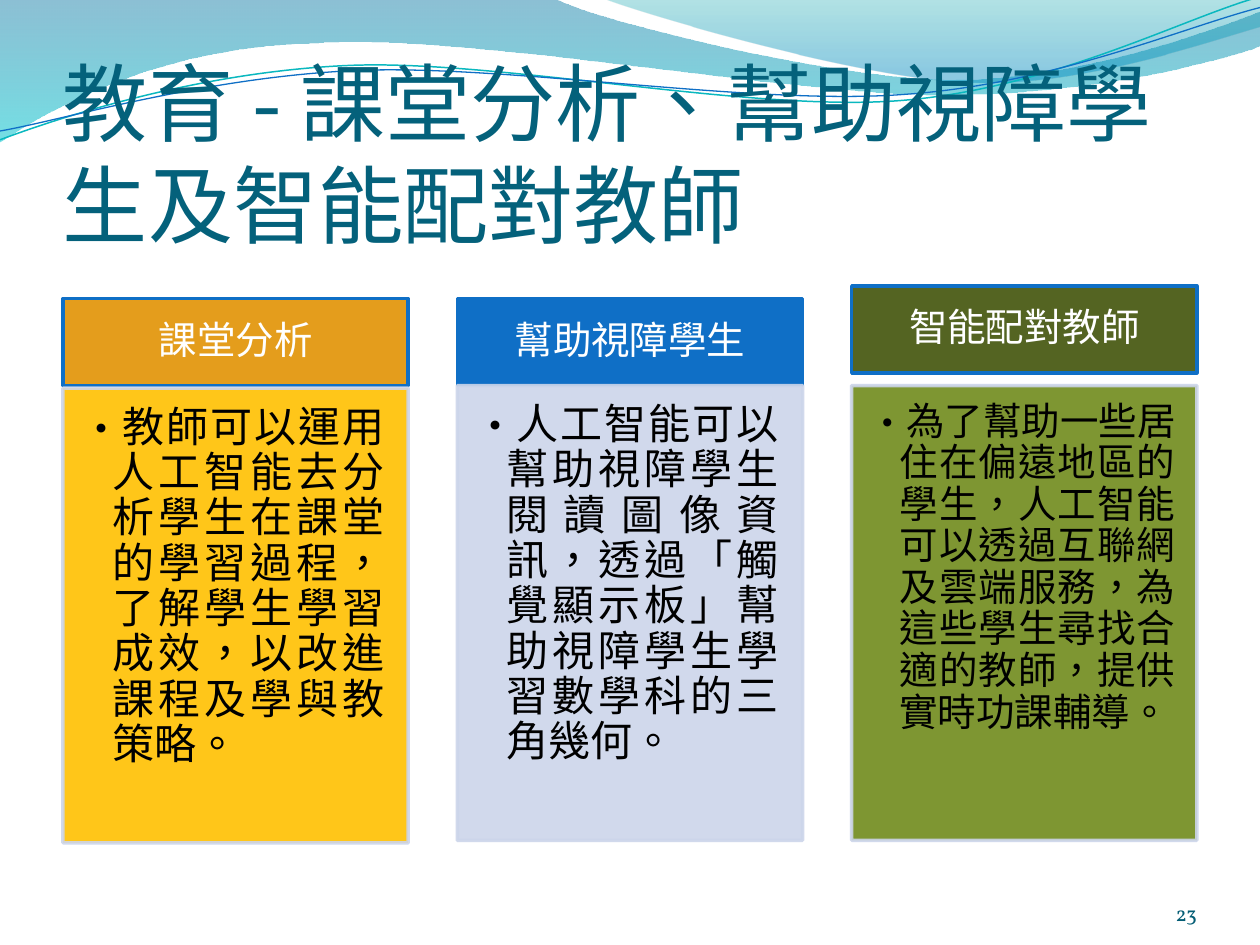
from lxml.etree import SubElement
from pptx import Presentation
from pptx.dml.color import RGBColor
from pptx.enum.lang import MSO_LANGUAGE_ID
from pptx.enum.shapes import MSO_SHAPE
from pptx.enum.text import MSO_ANCHOR, PP_ALIGN
from pptx.oxml.ns import qn
from pptx.util import Inches, Pt

CJK = "Noto Sans CJK SC"
WHITE = RGBColor(0xFF, 0xFF, 0xFF)
BLACK = RGBColor(0, 0, 0)
TEAL = RGBColor(0x04, 0x61, 0x7B)
NUMBER = RGBColor(0x04, 0x5D, 0x75)
BLUE = RGBColor(0x0F, 0x6F, 0xC6)
AQUA = RGBColor(0x0A, 0xB8, 0xBF)
ORANGE = RGBColor(0xE4, 0x9D, 0x1C)
YELLOW = RGBColor(0xFF, 0xC0, 0x00)
PALE = RGBColor(0xCC, 0xD5, 0xEA)
DARK_GREEN = RGBColor(0x54, 0x64, 0x22)
GREEN = RGBColor(0x7E, 0x96, 0x32)

# Wave outlines: a pair is a straight step, six numbers a Bezier step
LEFT_WAVE = [(0, 0), (4.4, -0.01), (4.76, 0.17, 6.64, 0.63, 7.58, 0.63),
             (8.53, 0.63, 9.58, 0.26, 10, 0.09), (10.01, 0.36),
             (9.83, 0.44, 8.7, 0.76, 7.46, 0.75),
             (6.22, 0.75, 3.82, 0.28, 2.57, 0.34),
             (1.29, 0.36, 0.46, 0.83, -0.01, 1.13), (0, 0)]
RIGHT_WAVE = [(4.79, -0.01), (5.09, 0.11, 6.82, 0.62, 7.69, 0.65),
              (8.56, 0.69, 9.61, 0.32, 10, 0.21), (10, 0), (4.79, -0.01)]
AQUA_CURVE = [(0, 1.11), (0.48, 0.93, 1.58, 0.57, 2.77, 0.52),
              (3.95, 0.47, 5.93, 0.89, 7.13, 0.8),
              (8.33, 0.71, 9.38, 0.15, 9.98, -0.02)]
BLUE_CURVE = [(0, 1.04), (0.47, 0.96, 1.64, 0.61, 2.83, 0.56),
              (4.03, 0.51, 5.97, 0.84, 7.17, 0.75),
              (8.36, 0.67, 9.41, 0.21, 10, 0.06)]
LEFT_STOPS = [(0, RGBColor(0, 0x74, 0xA1), 45), (1, RGBColor(0, 0xC6, 0xCF), 55)]
RIGHT_STOPS = [(0, RGBColor(0, 0xA1, 0xA9), 30), (0.8, RGBColor(0, 0x8B, 0xBF), 45)]

# Heading, text, text size, heading fill, body fill and opacity,
# heading top, body top, body insets
CARDS = [
    ("課堂分析",
     "教師可以運用人工智能去分析學生在課堂的學習過程，了解學生學習成效，以改進課程及學與教策略。",
     24, ORANGE, YELLOW, 90, 2.37, 3.08, (0.14, 0.14, 0.19, 0.21)),
    ("幫助視障學生",
     "人工智能可以幫助視障學生閱讀圖像資訊，透過「觸覺顯示板」幫助視障學生學習數學科的三角幾何。",
     24, BLUE, PALE, 90, 2.37, 3.06, (0.14, 0.14, 0.19, 0.21)),
    ("智能配對教師",
     "為了幫助一些居住在偏遠地區的學生，人工智能可以透過互聯網及雲端服務，為這些學生尋找合適的教師，提供實時功課輔導。",
     22, DARK_GREEN, GREEN, 100, 2.27, 3.06, (0.13, 0.13, 0.17, 0.19)),
]


def set_alpha(parent, percents):
    for clr, percent in zip(parent.iter(qn("a:srgbClr")), percents):
        SubElement(clr, qn("a:alpha")).set("val", str(percent * 1000))


def add_outline(s, steps, close):
    points = [(Inches(step[i]), Inches(step[i + 1]))
              for step in steps for i in range(0, len(step), 2)]
    builder = s.shapes.build_freeform(*points[0])
    builder.add_line_segments(points[1:], close=close)
    sp = builder.convert_to_shape()
    sp.shadow.inherit = False
    # Merge each three straight steps of a Bezier into one curve step
    lines = iter(list(sp._element.spPr.iter(qn("a:lnTo"))))
    for step in steps[1:]:
        first = next(lines)
        if len(step) == 6:
            first.tag = qn("a:cubicBezTo")
            for _ in range(2):
                extra = next(lines)
                first.append(extra[0])
                extra.getparent().remove(extra)
    return sp


def add_waves(s):
    for steps, stops in ((LEFT_WAVE, LEFT_STOPS), (RIGHT_WAVE, RIGHT_STOPS)):
        sp = add_outline(s, steps, True)
        sp.line.fill.background()
        sp.fill.gradient()
        sp.fill.gradient_angle = 270
        for stop, (position, color, _) in zip(sp.fill.gradient_stops, stops):
            stop.position = position
            stop.color.rgb = color
        set_alpha(sp._element.spPr, [alpha for _, _, alpha in stops])
    for steps, color, width in ((AQUA_CURVE, AQUA, 0.85), (BLUE_CURVE, BLUE, 0.75)):
        sp = add_outline(s, steps, False)
        sp.fill.background()
        sp.line.color.rgb = color
        sp.line.width = Pt(width)


def set_text(sp, text, size, color, align, anchor, insets, font=CJK):
    tf = sp.text_frame
    tf.word_wrap = True
    tf.vertical_anchor = anchor
    tf.margin_left, tf.margin_top, tf.margin_right, tf.margin_bottom = map(Inches, insets)
    p = tf.paragraphs[0]
    p.alignment = align
    r = p.add_run()
    r.text = text
    r.font.size = Pt(size)
    r.font.name = font
    r.font.color.rgb = color
    if font == CJK:
        r.font.language_id = MSO_LANGUAGE_ID.CHINESE_HONG_KONG_SAR
        SubElement(r.font._element, qn("a:ea")).set("typeface", font)
    return p


def add_label(s, box, *text_args):
    set_text(s.shapes.add_textbox(*map(Inches, box)), *text_args)


def add_panel(s, box, fill, line):
    sp = s.shapes.add_shape(MSO_SHAPE.RECTANGLE, *map(Inches, box))
    sp.shadow.inherit = False
    sp.fill.solid()
    sp.fill.fore_color.rgb = fill
    sp.line.color.rgb = line
    sp.line.width = Pt(2)
    return sp


def add_card(s, left, width, card):
    heading, text, size, head_fill, body_fill, alpha, head_top, body_top, insets = card
    # Heading bar
    sp = add_panel(s, (left, head_top, width, 0.69), head_fill, BLUE)
    p = set_text(sp, heading, 22, WHITE, PP_ALIGN.CENTER, MSO_ANCHOR.MIDDLE,
                 (0.17, 0.1, 0.17, 0.1))
    p.line_spacing = 0.9
    # Bulleted body, with punctuation kept inside the margin
    sp = add_panel(s, (left, body_top, width, 3.61), body_fill, PALE)
    set_alpha(sp._element.spPr, (alpha, 90))
    p = set_text(sp, text, size, BLACK, PP_ALIGN.JUSTIFY, MSO_ANCHOR.TOP, insets)
    p.line_spacing = 0.9
    pPr = p._p.get_or_add_pPr()
    pPr.set("marL", str(Inches(0.25)))
    pPr.set("indent", str(Inches(-0.25)))
    pPr.set("hangingPunct", "0")
    SubElement(pPr, qn("a:buFont")).set("typeface", CJK)
    SubElement(pPr, qn("a:buChar")).set("char", "•")


def main():
    prs = Presentation()
    prs.slide_width, prs.slide_height = Inches(10), Inches(7.5)
    s = prs.slides.add_slide(prs.slide_layouts[6])
    add_waves(s)
    # Title
    add_label(s, (0.5, 0.77, 9, 1.25), "教育 - 課堂分析、幫助視障學生及智能配對教師",
              48.6, TEAL, PP_ALIGN.LEFT, MSO_ANCHOR.BOTTOM, (0, 0.05, 0, 0))
    # Three equal columns
    for i, card in enumerate(CARDS):
        add_card(s, 0.5 + 3.13 * i, 2.74, card)
    # Slide number
    add_label(s, (8.67, 6.95, 0.83, 0.4), "23", 12, NUMBER,
              PP_ALIGN.RIGHT, MSO_ANCHOR.BOTTOM, (0, 0, 0, 0), "Vollkorn")
    prs.save("out.pptx")


if __name__ == "__main__":
    main()
